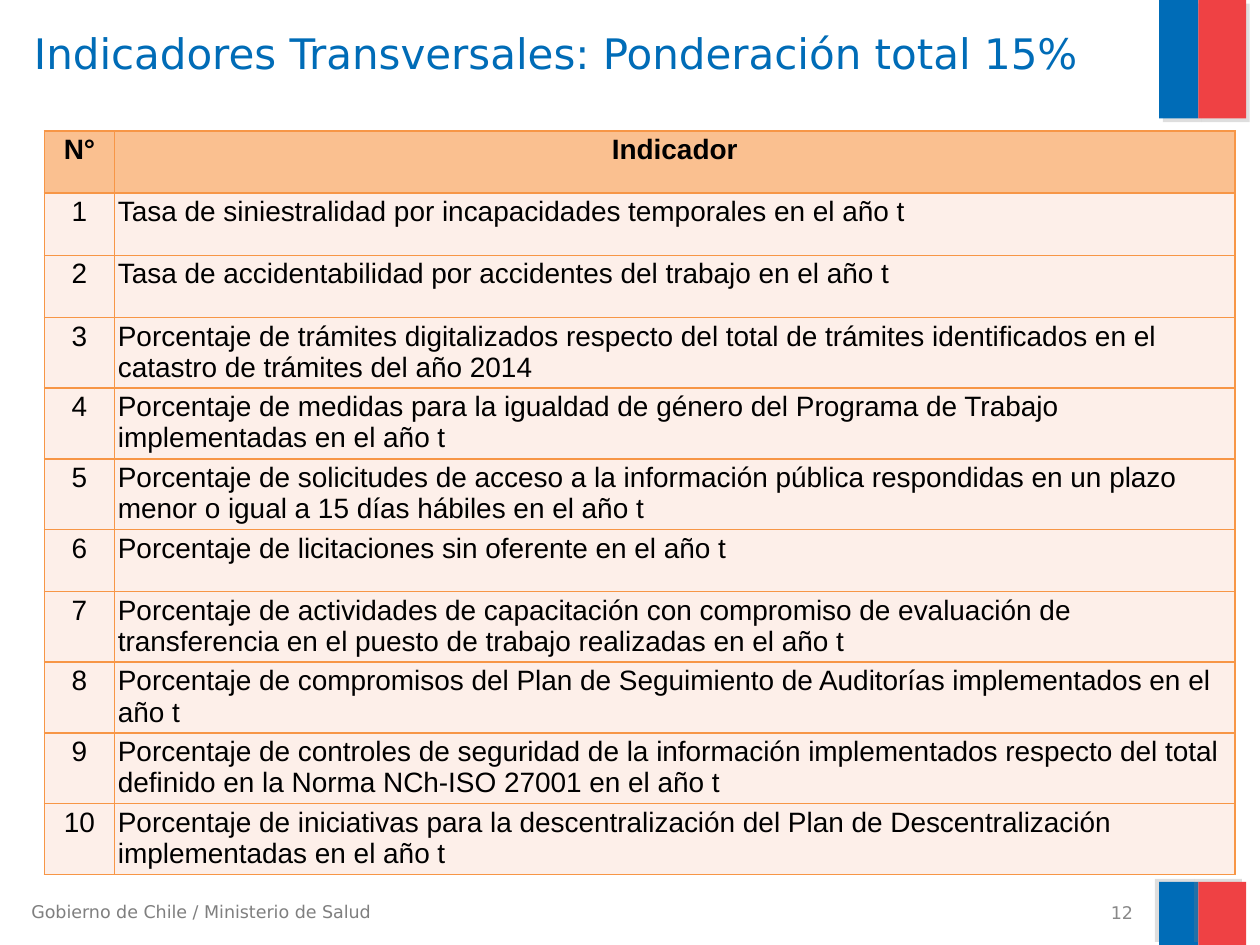
import dataclasses
import lxml.etree
import pptx
import pptx.dml.color
import pptx.enum.shapes
import pptx.enum.text
import pptx.oxml.ns
import pptx.util

Pt = pptx.util.Pt
ALIGN = pptx.enum.text.PP_ALIGN
ANCHOR = pptx.enum.text.MSO_ANCHOR
qn = pptx.oxml.ns.qn


@dataclasses.dataclass(frozen=True)
class Theme:
    blue: str = "006CB7"
    red: str = "EF4144"
    shadow: str = "808080"
    footer: str = "7F7F7F"
    number: str = "898989"
    text: str = "000000"
    border: str = "F79646"
    header_fill: str = "FAC090"
    row_fill: str = "FDEFE9"
    heading_font: str = "DejaVu Sans"
    table_font: str = "Arial"
    title_size: int = 24
    table_size: int = 16
    small_size: int = 10


T = Theme()

INDICATORS = [
    "Tasa de siniestralidad por incapacidades temporales en el año t",
    "Tasa de accidentabilidad por accidentes del trabajo en el año t",
    "Porcentaje de trámites digitalizados respecto del total de trámites "
    "identificados en el catastro de trámites del año 2014",
    "Porcentaje de medidas para la igualdad de género del Programa de Trabajo "
    "implementadas en el año t",
    "Porcentaje de solicitudes de acceso a la información pública respondidas "
    "en un plazo menor o igual a 15 días hábiles en el año t",
    "Porcentaje de licitaciones sin oferente en el año t",
    "Porcentaje de actividades de capacitación con compromiso de evaluación de "
    "transferencia en el puesto de trabajo realizadas en el año t",
    "Porcentaje de compromisos del Plan de Seguimiento de Auditorías "
    "implementados en el año t",
    "Porcentaje de controles de seguridad de la información implementados "
    "respecto del total definido en la Norma NCh-ISO 27001 en el año t",
    "Porcentaje de iniciativas para la descentralización del Plan de "
    "Descentralización implementadas en el año t",
]


def rgb(color):
    return pptx.dml.color.RGBColor.from_string(color)


def write(tf, text, font=T.heading_font, size=T.small_size, color=T.text,
          bold=False, align=ALIGN.LEFT, anchor=ANCHOR.TOP):
    tf.word_wrap = True
    tf.vertical_anchor = anchor
    p = tf.paragraphs[0]
    p.alignment = align
    r = p.add_run()
    r.text = text
    r.font.name = font
    r.font.size = Pt(size)
    r.font.bold = bold
    r.font.color.rgb = rgb(color)
    end = lxml.etree.SubElement(p._p, qn("a:endParaRPr"), sz=str(size * 100))
    lxml.etree.SubElement(end, qn("a:latin"), typeface=font)


def add_color(parent, color):
    fill = lxml.etree.SubElement(parent, qn("a:solidFill"))
    return lxml.etree.SubElement(fill, qn("a:srgbClr"), val=color)


def add_shadow(sp, angle):
    sp.shadow.inherit = False
    effects = sp._element.spPr.find(qn("a:effectLst"))
    shadow = lxml.etree.SubElement(
        effects, qn("a:outerShdw"), blurRad="0", dist=str(Pt(3)),
        dir=str(angle * 60000), algn="ctr", rotWithShape="0")
    color = lxml.etree.SubElement(shadow, qn("a:srgbClr"), val=T.shadow)
    lxml.etree.SubElement(color, qn("a:alpha"), val="25000")


def add_flag(s, x, y, w, h, angle):
    blue_w = w * 0.45
    for color, left, width in ((T.blue, x, blue_w), (T.red, x + blue_w, w - blue_w)):
        sp = s.shapes.add_shape(pptx.enum.shapes.MSO_SHAPE.RECTANGLE,
                                Pt(left), Pt(y), Pt(width), Pt(h))
        sp.fill.solid()
        sp.fill.fore_color.rgb = rgb(color)
        sp.line.fill.background()
        add_shadow(sp, angle)


def add_title(s, x, y, w, h):
    sp = s.shapes.title
    sp.left, sp.top, sp.width, sp.height = Pt(x), Pt(y), Pt(w), Pt(h)
    write(sp.text_frame, "Indicadores Transversales: Ponderación total 15%",
          size=T.title_size, color=T.blue)
    sp.text_frame.auto_size = pptx.enum.text.MSO_AUTO_SIZE.NONE


def add_footer(s, x, y, w, h):
    box = s.shapes.add_textbox(Pt(x), Pt(y), Pt(218), Pt(h))
    write(box.text_frame, "Gobierno de Chile / Ministerio de Salud", color=T.footer)
    number_w = 168
    box = s.shapes.add_textbox(Pt(x + w - number_w), Pt(y + 0.5), Pt(number_w), Pt(h))
    write(box.text_frame, "12", color=T.number, align=ALIGN.RIGHT, anchor=ANCHOR.MIDDLE)


def format_cell(cell, text, fill, **kw):
    cell.margin_left = cell.margin_right = cell.margin_top = Pt(2)
    cell.margin_bottom = Pt(0)
    write(cell.text_frame, text, font=T.table_font, size=T.table_size, **kw)
    tcPr = cell._tc.get_or_add_tcPr()
    for side in ("lnL", "lnR", "lnT", "lnB"):
        add_color(lxml.etree.SubElement(tcPr, qn("a:" + side), w=str(Pt(1))), T.border)
    cell.fill.solid()
    cell.fill.fore_color.rgb = rgb(fill)


def add_indicators(s, x, y, w, h):
    rows = [("N°", "Indicador")]
    rows += [(str(i), text) for i, text in enumerate(INDICATORS, 1)]
    one_line_h, line_limit = 35.5, 80
    wrapped = [len(text) > line_limit for _, text in rows]
    two_line_h = (h - one_line_h * wrapped.count(False)) / wrapped.count(True)
    table = s.shapes.add_table(len(rows), 2, Pt(x), Pt(y), Pt(w), Pt(h)).table
    number_w = 40
    table.columns[0].width = Pt(number_w)
    table.columns[1].width = Pt(w - number_w)
    for i, row in enumerate(rows):
        table.rows[i].height = Pt(two_line_h if wrapped[i] else one_line_h)
        header = i == 0
        for j, text in enumerate(row):
            format_cell(table.cell(i, j), text,
                        T.header_fill if header else T.row_fill, bold=header,
                        align=ALIGN.CENTER if header or j == 0 else ALIGN.LEFT)


def main():
    prs = pptx.Presentation()
    prs.slide_width, prs.slide_height = Pt(720), Pt(540)
    s = prs.slides.add_slide(prs.slide_layouts[5])
    add_flag(s, 662.4, 0, 49.7, 67.7, angle=45)
    add_flag(s, 662.4, 504, 49.7, 36, angle=215)
    add_footer(s, 10.8, 511.2, 643.7, 19.4)
    add_title(s, 12.2, 12.2, 643, 90)
    add_indicators(s, 25.4, 74.9, 680.4, 418.5)
    prs.save("out.pptx")


if __name__ == "__main__":
    main()
